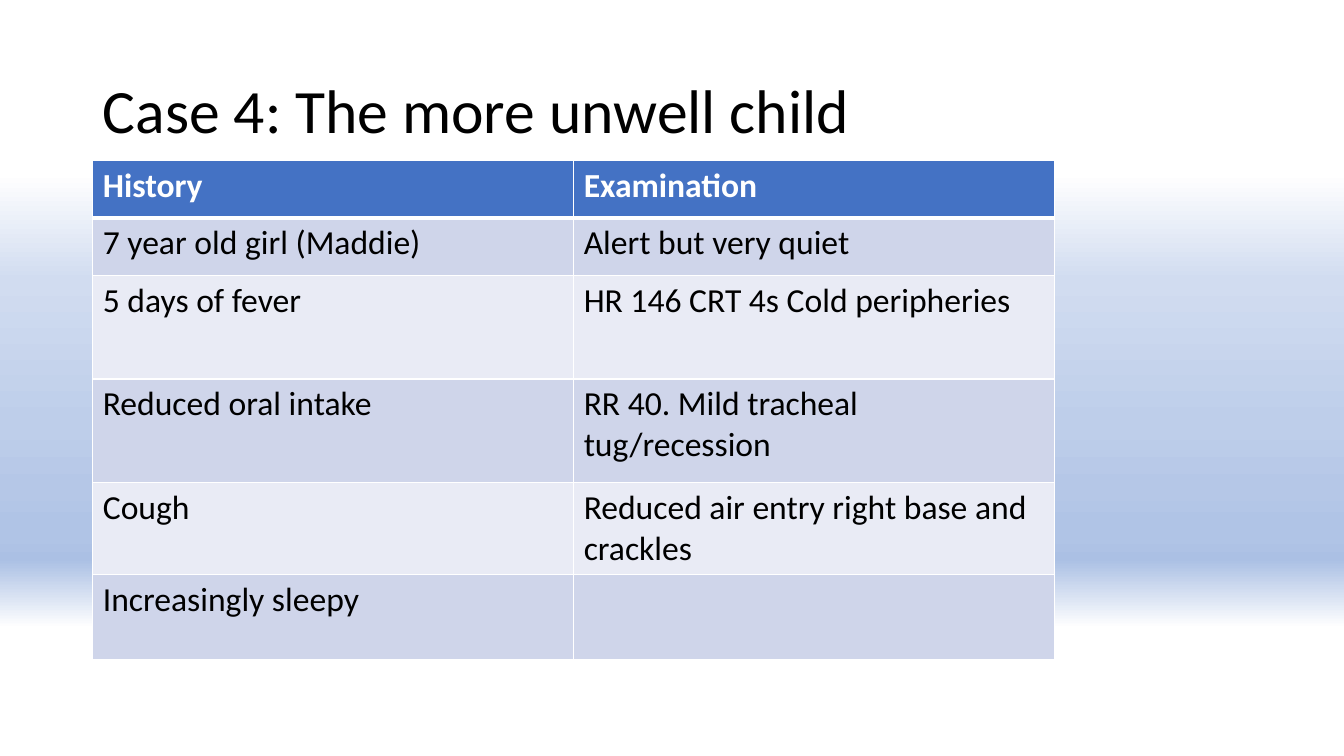
import pptx
import pptx.dml.color
import pptx.enum.text
import pptx.oxml
import pptx.oxml.ns
import pptx.util
from pptx.util import Inches

COLORS = {
    "text": "000000",
    "white": "FFFFFF",
    "header": "4472C4",
    "band_dark": "CFD5EA",
    "band_light": "E9EBF5",
}
BACKGROUND_STOPS = [
    (23, "FFFFFF"), (37, "D1DCF0"), (56, "BECEEA"), (65, "B5C7E7"), (69, "B0C4E6"),
    (72, "AEC2E5"), (73, "ADC1E5"), (73, "ABC0E4"), (74, "ABC0E4"), (83, "FFFFFF"),
]
CASE_ROWS = [
    ("History", "Examination"),
    ("7 year old girl (Maddie)", "Alert but very quiet"),
    ("5 days of fever", "HR 146 CRT 4s Cold peripheries"),
    ("Reduced oral intake", "RR 40. Mild tracheal tug/recession"),
    ("Cough", "Reduced air entry right base and crackles"),
    ("Increasingly sleepy", ""),
]
ROW_HEIGHTS = [0.57, 0.57, 1.03, 1.03, 0.84, 0.84]
COLUMN_WIDTH = 4.77


def rgb(name):
    return pptx.dml.color.RGBColor.from_string(COLORS[name])


def set_background(s):
    """Fill the slide with a top-to-bottom gradient of many stops."""
    fill = s.background.fill
    fill.gradient()
    fill.gradient_angle = 270
    stops = "".join(
        f'<a:gs pos="{pos * 1000}"><a:srgbClr val="{color}"/></a:gs>'
        for pos, color in BACKGROUND_STOPS
    )
    new_list = pptx.oxml.parse_xml(
        f'<a:gsLst {pptx.oxml.ns.nsdecls("a")}>{stops}</a:gsLst>')
    old_list = s.element.find(".//" + pptx.oxml.ns.qn("a:gsLst"))
    old_list.getparent().replace(old_list, new_list)


def format_font(font, size, color, bold=False):
    font.name = "Calibri"
    font.size = pptx.util.Pt(size)
    font.bold = bold
    font.color.rgb = rgb(color)


def set_title(s, text):
    title = s.shapes.title
    title.left, title.top = Inches(0.92), Inches(0.4)
    title.width, title.height = Inches(9.75), Inches(1.45)
    tf = title.text_frame
    tf.word_wrap = True
    tf.auto_size = pptx.enum.text.MSO_AUTO_SIZE.NONE
    tf.vertical_anchor = pptx.enum.text.MSO_ANCHOR.MIDDLE
    p = tf.paragraphs[0]
    p.alignment = pptx.enum.text.PP_ALIGN.LEFT
    p.line_spacing = 0.9
    r = p.add_run()
    r.text = text
    format_font(r.font, 44, "text")


def set_borders(cell, widths):
    """Draw white borders; widths are points for left, right, top, bottom."""
    tc_pr = cell._tc.get_or_add_tcPr()
    for index, (side, width) in enumerate(zip("LRTB", widths)):
        tc_pr.insert(index, pptx.oxml.parse_xml(
            f'<a:ln{side} {pptx.oxml.ns.nsdecls("a")} w="{pptx.util.Pt(width)}">'
            f'<a:solidFill><a:srgbClr val="{COLORS["white"]}"/></a:solidFill>'
            f'</a:ln{side}>'))


def fill_cell(cell, text, row):
    is_header = row == 0
    band = "band_dark" if row % 2 else "band_light"
    cell.fill.solid()
    cell.fill.fore_color.rgb = rgb("header" if is_header else band)
    set_borders(cell, (1, 1, 3 if row == 1 else 1, 3 if is_header else 1))
    if text:
        r = cell.text_frame.paragraphs[0].add_run()
        r.text = text
        format_font(r.font, 24, "white" if is_header else "text", is_header)


def add_case_table(s):
    columns = len(CASE_ROWS[0])
    table = s.shapes.add_table(
        len(CASE_ROWS), columns, Inches(0.92), Inches(1.59),
        Inches(COLUMN_WIDTH * columns), Inches(sum(ROW_HEIGHTS))).table
    for column in table.columns:
        column.width = Inches(COLUMN_WIDTH)
    for row, (texts, height) in enumerate(zip(CASE_ROWS, ROW_HEIGHTS)):
        table.rows[row].height = Inches(height)
        for column, text in enumerate(texts):
            fill_cell(table.cell(row, column), text, row)


def main():
    prs = pptx.Presentation()
    prs.slide_width, prs.slide_height = Inches(13.33), Inches(7.5)
    s = prs.slides.add_slide(prs.slide_layouts[5])
    set_background(s)
    set_title(s, "Case 4: The more unwell child")
    add_case_table(s)
    prs.save("out.pptx")


if __name__ == "__main__":
    main()
